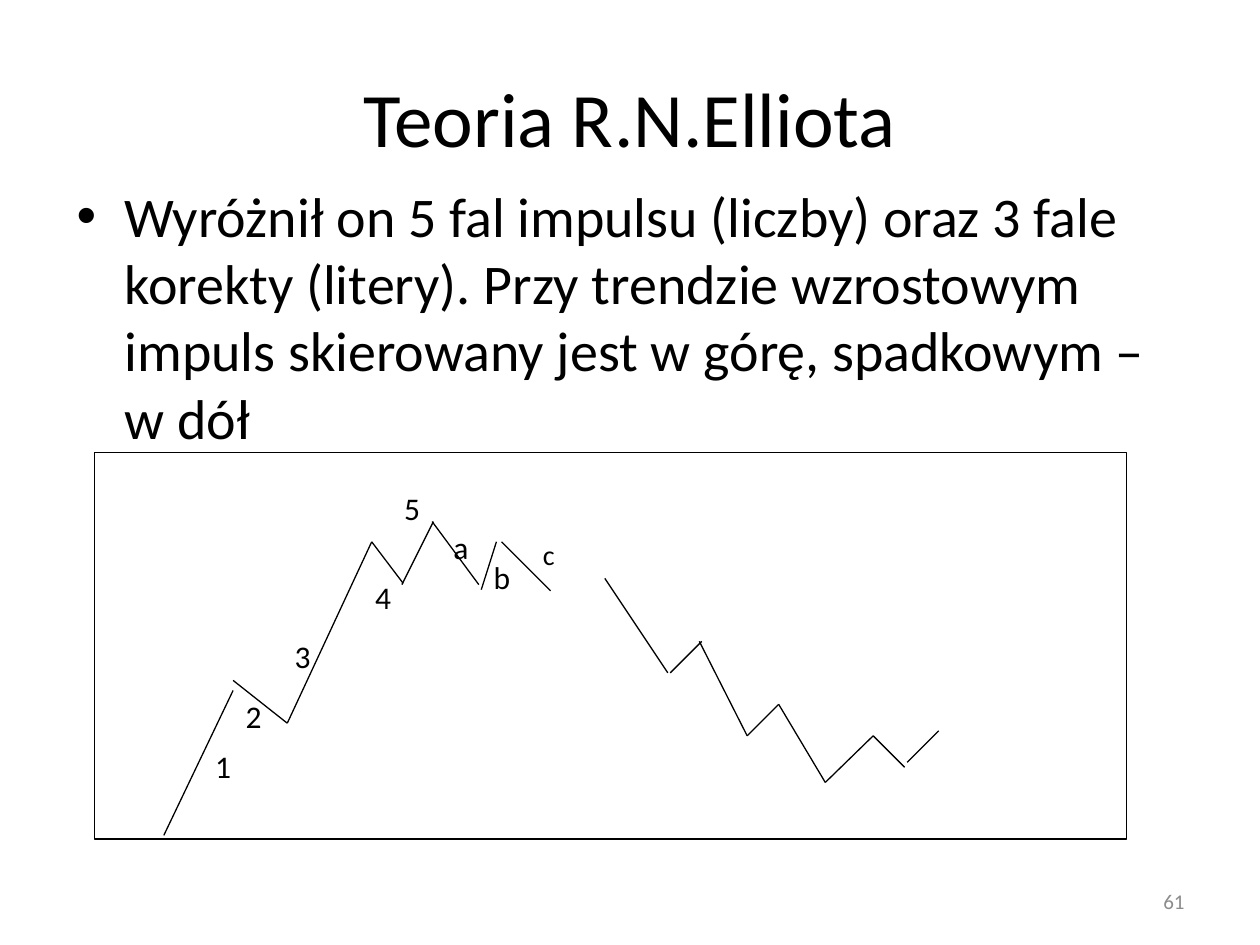
from dataclasses import dataclass

from lxml import etree
from pptx import Presentation
from pptx.dml.color import RGBColor
from pptx.enum.shapes import MSO_CONNECTOR, MSO_SHAPE
from pptx.enum.text import MSO_ANCHOR, PP_ALIGN
from pptx.oxml.ns import qn
from pptx.util import Inches, Pt

RECT = MSO_SHAPE.RECTANGLE
STRAIGHT = MSO_CONNECTOR.STRAIGHT
TOP, MIDDLE = MSO_ANCHOR.TOP, MSO_ANCHOR.MIDDLE
LEFT, CENTER, RIGHT = PP_ALIGN.LEFT, PP_ALIGN.CENTER, PP_ALIGN.RIGHT


@dataclass(frozen=True)
class Theme:
    font: str = "Calibri"
    ink: RGBColor = RGBColor(0, 0, 0)
    paper: RGBColor = RGBColor(255, 255, 255)
    muted: RGBColor = RGBColor(0x8C, 0x8C, 0x8C)
    title: int = 44
    body: int = 32
    label: int = 18
    small_label: int = 16
    number: int = 12
    line: float = 0.75


THEME = Theme()

TITLE = "Teoria R.N.Elliota"
BODY = ("Wyróżnił on 5 fal impulsu (liczby) oraz 3 fale korekty (litery). "
        "Przy trendzie wzrostowym impuls skierowany jest w górę, "
        "spadkowym – w dół")

RISING_WAVES = [
    (1.3, 6.63, 1.85, 5.48),
    (1.85, 5.4, 2.28, 5.74),
    (2.28, 5.74, 2.95, 4.3),
    (2.95, 4.3, 3.2, 4.63),
    (3.19, 4.64, 3.44, 4.14),
    (3.43, 4.14, 3.8, 4.64),
    (3.82, 4.68, 3.94, 4.3),
    (3.98, 4.3, 4.37, 4.69),
]
FALLING_WAVES = [
    (4.8, 4.59, 5.3, 5.34),
    (5.32, 5.34, 5.57, 5.09),
    (5.55, 5.09, 5.93, 5.84),
    (5.93, 5.84, 6.18, 5.59),
    (6.18, 5.59, 6.55, 6.21),
    (6.55, 6.21, 6.93, 5.84),
    (6.93, 5.84, 7.18, 6.09),
    (7.2, 6.05, 7.45, 5.8),
]
WAVE_LABELS = [
    ("1", 1.61, 5.88, 0.32),
    ("2", 1.85, 5.48, 0.55),
    ("3", 2.24, 5.01, 0.47),
    ("4", 2.88, 4.54, 0.24),
    ("5", 3.11, 3.83, 0.24),
    ("a", 3.5, 4.14, 0.24),
    ("b", 3.82, 4.38, 0.24),
]


def write(sp, text, size, color=THEME.ink, align=LEFT, anchor=TOP):
    tf = sp.text_frame
    tf.word_wrap = True
    tf.vertical_anchor = anchor
    p = tf.paragraphs[0]
    p.alignment = align
    r = p.add_run()
    r.text = text
    r.font.name = THEME.font
    r.font.size = Pt(size)
    r.font.color.rgb = color
    return p


def add_text(shapes, box, text, size, **style):
    sp = shapes.add_textbox(*map(Inches, box))
    return write(sp, text, size, **style)


def add_bullet(p, indent):
    pPr = p._p.get_or_add_pPr()
    pPr.set("marL", str(Inches(indent)))
    pPr.set("indent", str(-Inches(indent)))
    etree.SubElement(pPr, qn("a:buFont")).set("typeface", "Arial")
    etree.SubElement(pPr, qn("a:buChar")).set("char", "•")


def add_box(shapes, box, outlined):
    sp = shapes.add_shape(RECT, *map(Inches, box))
    sp.shadow.inherit = False
    sp.fill.solid()
    sp.fill.fore_color.rgb = THEME.paper
    if outlined:
        sp.line.color.rgb = THEME.ink
        sp.line.width = Pt(THEME.line)
    else:
        sp.line.fill.background()
    return sp


def add_wave(shapes, ends):
    line = shapes.add_connector(STRAIGHT, *map(Inches, ends))
    line.line.color.rgb = THEME.ink
    line.line.width = Pt(THEME.line)
    etree.SubElement(line._element.spPr, qn("a:effectLst"))


def add_wave_chart(shapes):
    add_box(shapes, (0.75, 3.59, 8.19, 3.07), outlined=True)
    sp = add_box(shapes, (4.21, 4.22, 0.25, 0.25), outlined=False)
    write(sp, "c", THEME.small_label)
    waves = shapes.add_group_shape().shapes
    for ends in RISING_WAVES + FALLING_WAVES:
        add_wave(waves, ends)
    for text, left, top, width in WAVE_LABELS:
        add_text(waves, (left, top, width, 0.4), text, THEME.label)


def main():
    prs = Presentation()
    prs.slide_width, prs.slide_height = Inches(10), Inches(7.5)
    shapes = prs.slides.add_slide(prs.slide_layouts[6]).shapes
    add_text(shapes, (7.17, 6.95, 2.33, 0.4), "61", THEME.number,
             color=THEME.muted, align=RIGHT, anchor=MIDDLE)
    add_text(shapes, (0.5, 0.3, 9, 1.25), TITLE, THEME.title,
             align=CENTER, anchor=MIDDLE)
    add_wave_chart(shapes)
    p = add_text(shapes, (0.51, 1.39, 9, 4.95), BODY, THEME.body)
    add_bullet(p, 0.38)
    prs.save("out.pptx")


if __name__ == "__main__":
    main()
